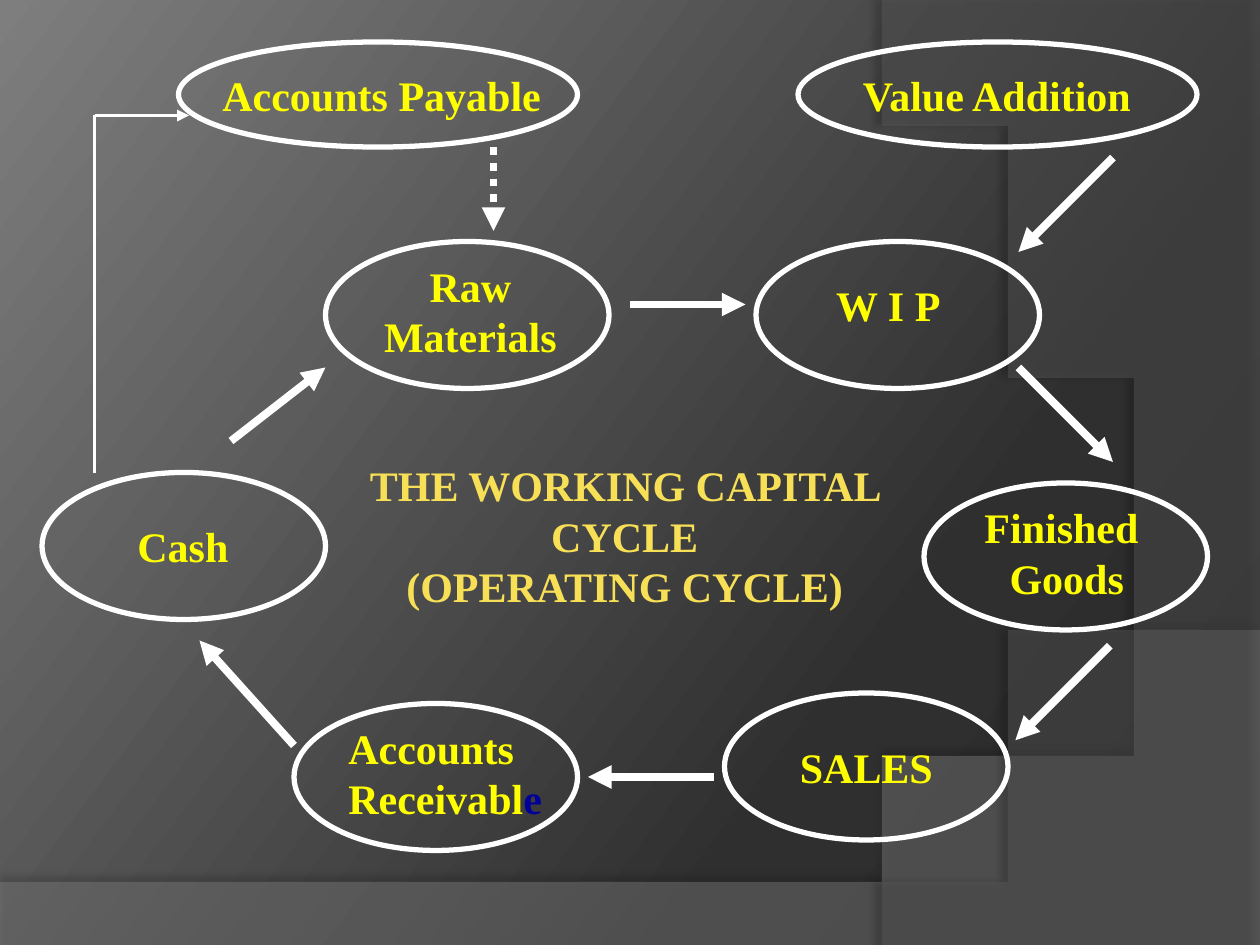
import copy
import pptx
import pptx.util
import pptx.dml.color
import pptx.enum.dml
import pptx.enum.shapes
import pptx.enum.text
import pptx.oxml
import pptx.oxml.ns

RGBColor = pptx.dml.color.RGBColor
Align = pptx.enum.text.PP_ALIGN
WHITE = RGBColor(0xFF, 0xFF, 0xFF)
YELLOW = RGBColor(0xFF, 0xFF, 0x00)
GOLD = RGBColor(0xF7, 0xDF, 0x56)
NAVY = RGBColor(0x00, 0x00, 0x99)
LOWER_SWEEP = RGBColor(0x7F, 0x7F, 0x7F)
RIGHT_SWEEP = RGBColor(0x5E, 0x5E, 0x5E)
BACKDROP = [(0, RGBColor(0x28, 0x28, 0x28)), (0.3, RGBColor(0x2F, 0x2F, 0x2F)),
            (1, RGBColor(0x7E, 0x7E, 0x7E))]

FONT = "Times New Roman"
CELL = pptx.util.Inches(1) / 12  # the slide is a grid of 120 columns by 90 rows
STAGE = (27, 14)
SOURCE = (38, 10)

# place, size, label, label box within the ellipse, alignment
ELLIPSES = [
    ((4, 45), STAGE, ["Cash"], (7.9, 4, 11.2, 6), Align.LEFT),
    ((31, 23), STAGE, ["Raw", "Materials"], (4.3, 1.2, 19, 10.9), Align.CENTER),
    ((72, 23), STAGE, ["W I P"], (6.4, 3, 12.4, 6), Align.CENTER),
    ((88, 46), STAGE, ["Finished ", "Goods"], (4.5, 1.2, 18.2, 10.9), Align.CENTER),
    ((69, 66), STAGE, ["SALES"], (6, 4, 15.1, 6), Align.LEFT),
    ((28, 67), STAGE, ["Accounts", "Receivabl"], (4, 1.2, 21, 10.9), Align.LEFT),
    ((17, 4), SOURCE, ["Accounts Payable"], (3, 2, 32.8, 6), Align.LEFT),
    ((76, 4), SOURCE, ["Value Addition"], (5, 2, 28.6, 6), Align.LEFT),
]
CYCLE_ARROWS = [
    ((22, 42), (31, 35)), ((60, 29), (71, 29)), ((97, 35), (106, 44)),
    ((105.7, 61.5), (96.7, 70.5)), ((68, 74), (56, 74)), ((28, 71), (19, 61)),
    ((106, 15), (97, 24)),
]


def grid(*cells):
    return [round(cell * CELL) for cell in cells]


def append_xml(parent, tag, content="", attributes=""):
    namespace = pptx.oxml.ns.nsdecls("a")
    parent.append(pptx.oxml.parse_xml(f"<a:{tag} {namespace} {attributes}>{content}</a:{tag}>"))


def add_text(page, box, lines, color=YELLOW, align=Align.LEFT, wrap=False,
             anchor=pptx.enum.text.MSO_ANCHOR.TOP, ending="", ending_color=NAVY):
    """Write one paragraph a line; the ending continues the last one in its own colour."""
    frame = page.shapes.add_textbox(*grid(*box)).text_frame
    frame.word_wrap = wrap
    frame.vertical_anchor = anchor
    if not wrap:
        frame.auto_size = pptx.enum.text.MSO_AUTO_SIZE.SHAPE_TO_FIT_TEXT
    frame.text = "\n".join(lines)
    spans = [(span, color) for para in frame.paragraphs for span in para.runs]
    if ending:
        span = frame.paragraphs[-1].add_run()
        span.text = ending
        spans.append((span, ending_color))
    for para in frame.paragraphs:
        para.alignment = align
    for span, span_color in spans:
        span.font.name = FONT
        span.font.size = pptx.util.Pt(24)
        span.font.bold = True
        span.font.color.rgb = span_color


def add_ellipse(page, place, size, lines, label, align, ending=""):
    left, top = place
    shape = page.shapes.add_shape(pptx.enum.shapes.MSO_SHAPE.OVAL, *grid(left, top, *size))
    shape.shadow.inherit = False
    shape.fill.background()
    shape.line.color.rgb = WHITE
    shape.line.width = pptx.util.Pt(3)
    x, y, width, height = label
    add_text(page, (left + x, top + y, width, height), lines, align=align, ending=ending)


def add_line(page, start, end, width=4.5, head=True, dash=None):
    line = page.shapes.add_connector(pptx.enum.shapes.MSO_CONNECTOR.STRAIGHT,
                                     *grid(*start, *end))
    line.line.color.rgb = WHITE
    line.line.width = pptx.util.Pt(width)
    if dash:
        line.line.dash_style = dash
    if head:
        append_xml(line.line._get_or_add_ln(), "tailEnd", attributes='type="triangle"')
    append_xml(line._element.spPr, "effectLst")


def curve(start, first, second, end, steps=40):
    """Points along a cubic curve, both ends included."""
    points = []
    for step in range(steps + 1):
        t = step / steps
        weights = ((1 - t) ** 3, 3 * t * (1 - t) ** 2, 3 * t * t * (1 - t), t ** 3)
        points.append(tuple(sum(w * p[axis] for w, p in zip(weights, (start, first, second, end)))
                            for axis in (0, 1)))
    return points


def add_sweep(page, points, color, opacity, shadow_opacity, distance, angle):
    """Fill a see-through outline, given in inches, with a soft shadow on its edge."""
    builder = page.shapes.build_freeform(*points[0], scale=pptx.util.Inches(1))
    builder.add_line_segments(points[1:], close=True)
    shape = builder.convert_to_shape()
    shape.fill.solid()
    shape.fill.fore_color.rgb = color
    shape.line.fill.background()
    fill_color = shape._element.spPr.find(".//" + pptx.oxml.ns.qn("a:srgbClr"))
    append_xml(fill_color, "alpha", attributes=f'val="{opacity * 1000}"')
    append_xml(shape._element.spPr, "effectLst",
               f'<a:outerShdw blurRad="{pptx.util.Pt(4)}" dist="{pptx.util.Pt(distance)}" '
               f'dir="{angle * 60000}" algn="ctr" rotWithShape="0"><a:srgbClr val="000000">'
               f'<a:alpha val="{shadow_opacity * 1000}"/></a:srgbClr></a:outerShdw>')


def add_backdrop(page):
    fill = page.background.fill
    fill.gradient()
    fill.gradient_angle = 143
    first = page._element.find(".//" + pptx.oxml.ns.qn("a:gs"))
    first.addnext(copy.deepcopy(first))
    for stop, (position, color) in zip(fill.gradient_stops, BACKDROP):
        stop.position = position
        stop.color.rgb = color
    lower_edge = curve((10, 5.2), (5.59, 7.29), (3.91, 7.19), (0, 7.05))
    add_sweep(page, [(0, 7.5), (10, 7.5)] + lower_edge, LOWER_SWEEP, 45, 35, 3.5, 270)
    right_edge = curve((7.03, 7.5), (8.91, 6.19), (9.47, 2.75), (6.68, 0))
    add_sweep(page, [(10, 0.02), (10, 7.5)] + right_edge, RIGHT_SWEEP, 40, 45, 4, 180)


def add_cycle(page):
    for place, size, lines, label, align in ELLIPSES:
        ending = "e" if lines[-1] == "Receivabl" else ""
        add_ellipse(page, place, size, lines, label, align, ending)
    for start, end in CYCLE_ARROWS:
        add_line(page, start, end)
    add_line(page, (47, 14), (47, 22), dash=pptx.enum.dml.MSO_LINE.ROUND_DOT)
    add_line(page, (9, 11), (9, 45), width=2.25, head=False)
    add_line(page, (9, 11), (18, 11), width=2.25)


def main():
    deck = pptx.Presentation()
    deck.slide_width = pptx.util.Inches(10)
    deck.slide_height = pptx.util.Inches(7.5)
    page = deck.slides.add_slide(deck.slide_layouts[6])
    add_backdrop(page)
    add_text(page, (30, 42, 59, 18), ["THE WORKING CAPITAL CYCLE", "(OPERATING CYCLE)"],
             color=GOLD, align=Align.CENTER, wrap=True,
             anchor=pptx.enum.text.MSO_ANCHOR.MIDDLE)
    add_cycle(page)
    deck.save("out.pptx")


if __name__ == "__main__":
    main()
